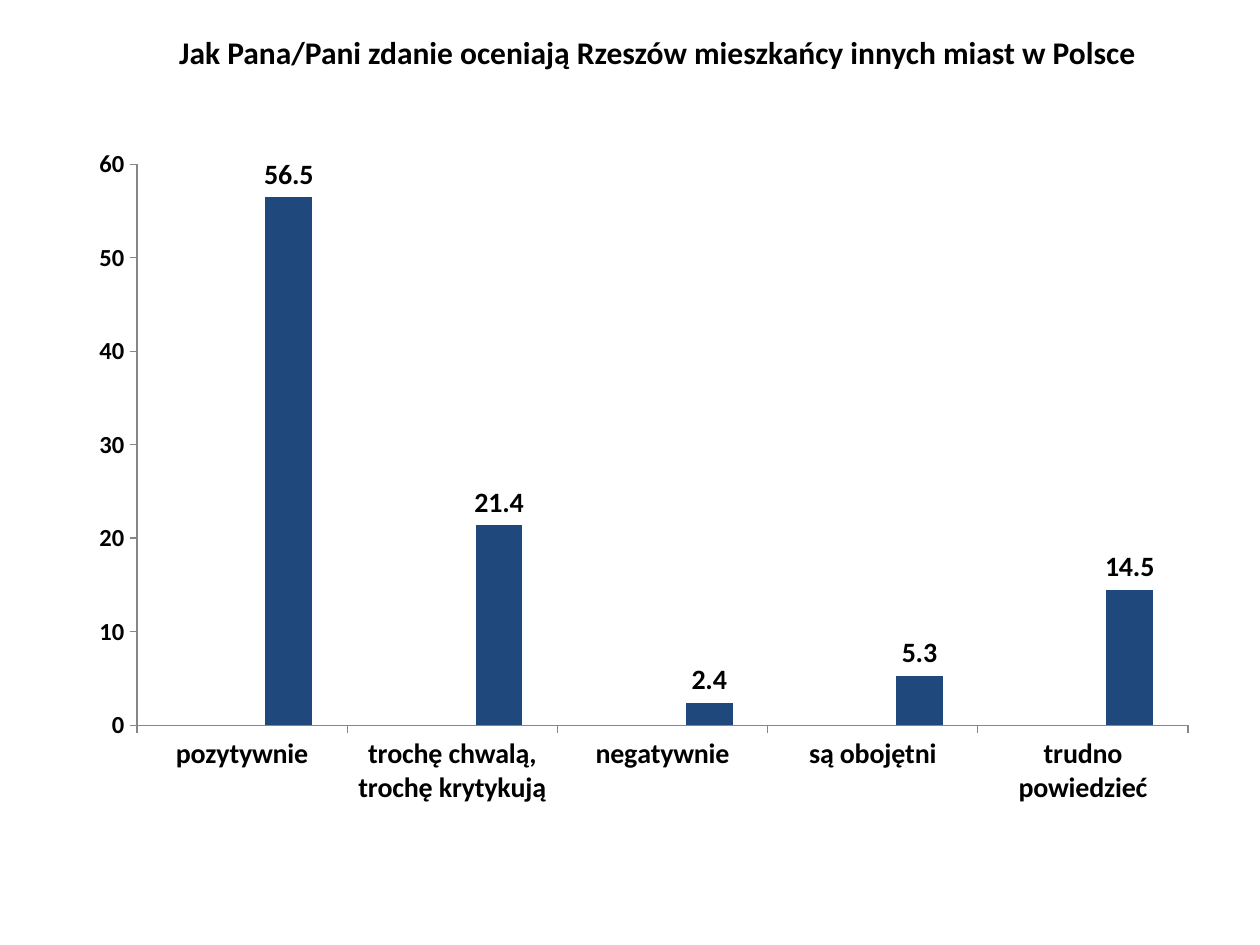
"""Build a slide with a column chart of how other cities' residents rate Rzeszów."""
from dataclasses import dataclass

from lxml import etree
from pptx import Presentation
from pptx import util as u
from pptx.chart import data as chart_data
from pptx.dml import color
from pptx.enum import chart as charts
from pptx.enum import text
from pptx.oxml import ns

TITLE = "Jak Pana/Pani zdanie oceniają Rzeszów mieszkańcy innych miast w Polsce"
ANSWERS = [
    ("pozytywnie", 56.5),
    ("trochę chwalą, trochę krytykują", 21.4),
    ("negatywnie", 2.4),
    ("są obojętni", 5.3),
    ("trudno powiedzieć", 14.5),
]
TITLE_AREA = (0.83, 0.21, 8.78, 0.4)
CHART_AREA = (0.61, 1.07, 9, 5.43)
PLOT_LAYOUT = {"x": 0.053, "y": 0.043, "w": 0.927, "h": 0.82}


@dataclass(frozen=True)
class Theme:
    font: str = "Calibri"
    ink: str = "000000"
    axis: str = "868686"
    series: tuple = ("4F81BD", "C0504D", "1F497D")
    title_size: int = 18
    label_size: int = 16
    scale_size: int = 14
    base_size: int = 10


THEME = Theme()


def rgb(value):
    return color.RGBColor.from_string(value)


def style_font(font, size, bold=True):
    font.name = THEME.font
    font.size = u.Pt(size)
    font.bold = bold
    font.color.rgb = rgb(THEME.ink)


def add_text(page, words, area, size, align):
    box = page.shapes.add_textbox(*map(u.Inches, area))
    frame = box.text_frame
    frame.word_wrap = True
    frame.auto_size = text.MSO_AUTO_SIZE.SHAPE_TO_FIT_TEXT
    para = frame.paragraphs[0]
    para.alignment = align
    span = para.add_run()
    span.text = words
    style_font(span.font, size)


def style_axis(axis, size):
    axis.has_major_gridlines = False
    axis.major_tick_mark = charts.XL_TICK_MARK.OUTSIDE
    axis.minor_tick_mark = charts.XL_TICK_MARK.NONE
    axis.format.line.color.rgb = rgb(THEME.axis)
    axis.format.line.width = u.Pt(0.75)
    style_font(axis.tick_labels.font, size)


def place_plot(chart):
    area = chart.element.find(".//" + ns.qn("c:plotArea"))
    for old in area.findall(ns.qn("c:layout")):
        area.remove(old)
    layout = etree.Element(ns.qn("c:layout"))
    manual = etree.SubElement(layout, ns.qn("c:manualLayout"))
    settings = {"layoutTarget": "inner", "xMode": "edge", "yMode": "edge", **PLOT_LAYOUT}
    for name, value in settings.items():
        etree.SubElement(manual, ns.qn("c:" + name), val=str(value))
    area.insert(0, layout)


def add_answer_chart(page):
    names, shares = zip(*ANSWERS)
    data = chart_data.CategoryChartData()
    data.categories = names
    blank = [None] * len(names)
    for number, values in enumerate((blank, blank, shares), 1):
        data.add_series(f"Series {number}", values)
    chart = page.shapes.add_chart(
        charts.XL_CHART_TYPE.COLUMN_CLUSTERED, *map(u.Inches, CHART_AREA), data
    ).chart
    chart.has_title = False
    chart.has_legend = False
    style_font(chart.font, THEME.base_size, bold=False)
    style_axis(chart.category_axis, THEME.label_size)
    style_axis(chart.value_axis, THEME.scale_size)
    chart.value_axis.minimum_scale = 0
    chart.value_axis.maximum_scale = 60
    chart.value_axis.major_unit = 10

    plot = chart.plots[0]
    plot.vary_by_categories = False
    plot.gap_width = 150
    plot.overlap = 0
    for series, fill in zip(plot.series, THEME.series):
        series.format.fill.solid()
        series.format.fill.fore_color.rgb = rgb(fill)
    labels = plot.series[-1].data_labels
    labels.show_value = True
    labels.number_format = "###0.0"
    labels.number_format_is_linked = False
    labels.position = charts.XL_LABEL_POSITION.OUTSIDE_END
    style_font(labels.font, THEME.label_size)
    place_plot(chart)


def main():
    deck = Presentation()
    deck.slide_width, deck.slide_height = u.Inches(10), u.Inches(7.5)
    page = deck.slides.add_slide(deck.slide_layouts[6])
    add_answer_chart(page)
    add_text(page, TITLE, TITLE_AREA, size=THEME.title_size, align=text.PP_ALIGN.CENTER)
    deck.save("out.pptx")


if __name__ == "__main__":
    main()
